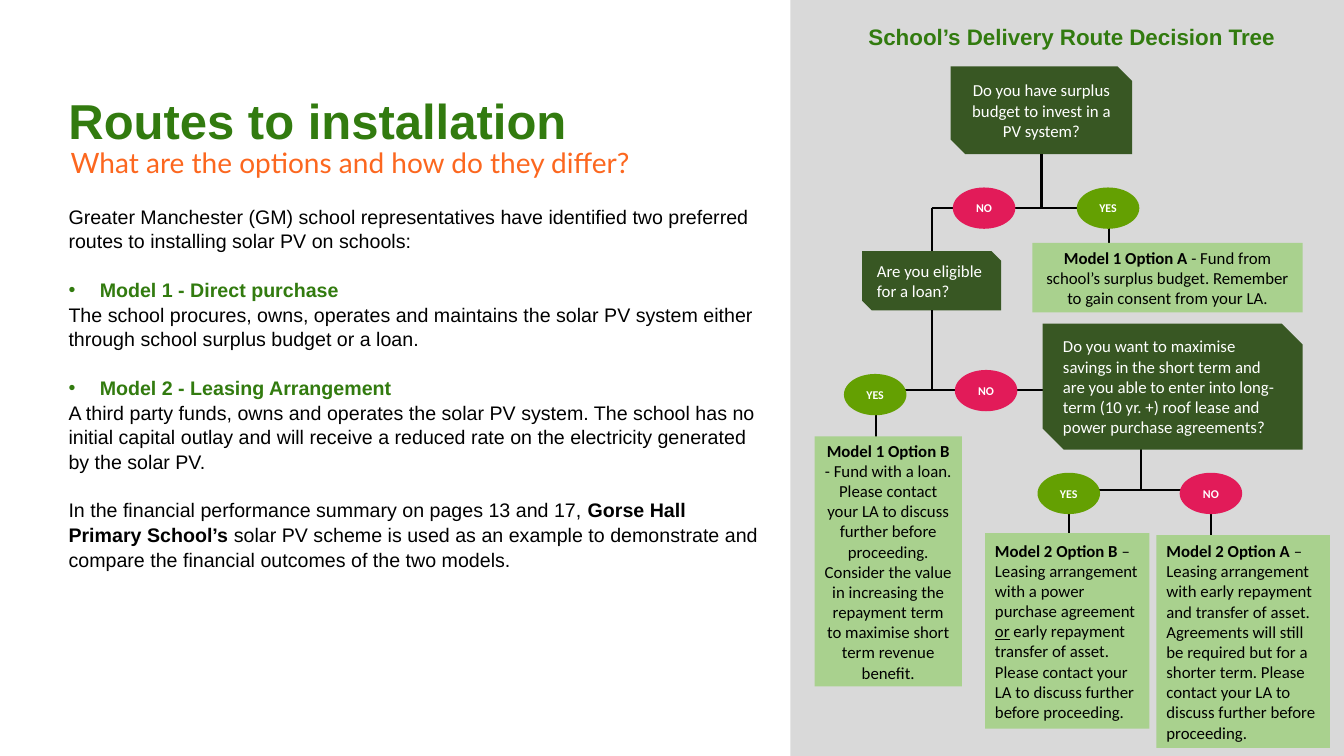
from lxml.etree import SubElement
from pptx import Presentation
from pptx.dml.color import RGBColor
from pptx.enum.shapes import MSO_CONNECTOR, MSO_SHAPE
from pptx.enum.text import MSO_ANCHOR, PP_ALIGN
from pptx.oxml.ns import qn
from pptx.util import Inches, Pt

COLOURS = {
    "panel": "D9D9D9", "heading": "327B0F", "subtitle": "FC671F",
    "question": "385723", "outcome": "A9D18E", "yes": "64A002",
    "no": "E21B59", "black": "000000", "white": "FFFFFF",
}


class DecisionPage:
    """Draws the elements of one slide in a shared style."""

    def __init__(self, page):
        self.page = page

    def colour(self, name):
        return RGBColor.from_string(COLOURS[name])

    def add_spans(self, para, spans, size, font, colour):
        for text, *marks in spans:
            span = para.add_run()
            span.text = text
            span.font.size = Pt(size)
            span.font.name = font
            span.font.color.rgb = self.colour(colour)
            span.font.bold = "bold" in marks
            span.font.underline = "underline" in marks

    def text_box(self, left, top, width, height, margin=0.1, anchor=MSO_ANCHOR.TOP):
        box = self.page.shapes.add_textbox(
            Inches(left), Inches(top), Inches(width), Inches(height))
        frame = box.text_frame
        frame.word_wrap = True
        frame.vertical_anchor = anchor
        frame.margin_left = frame.margin_right = Inches(margin)
        return frame

    def heading(self, bounds, text, size, align):
        para = self.text_box(*bounds, anchor=MSO_ANCHOR.MIDDLE).paragraphs[0]
        para.alignment = align
        para.line_spacing = 0.9
        self.add_spans(para, [(text, "bold")], size, "Arial", "heading")

    def subtitle(self, bounds, text):
        para = self.text_box(*bounds, margin=0).paragraphs[0]
        self.add_spans(para, [(text,)], 20, "Lato", "subtitle")

    def body(self, bounds, items):
        frame = self.text_box(*bounds, margin=0)
        for index, (kind, spans) in enumerate(items):
            para = frame.add_paragraph() if index else frame.paragraphs[0]
            para.line_spacing = 1.05
            if index and kind != "detail":
                para.space_before = Pt(17)
            if kind == "model":
                properties = para._p.get_or_add_pPr()
                properties.set("marL", str(Inches(0.31)))
                properties.set("indent", str(Inches(-0.31)))
                SubElement(properties, qn("a:buFont"), typeface="Arial")
                SubElement(properties, qn("a:buChar"), char="•")
            self.add_spans(para, spans, 14, "Arial", "heading" if kind == "model" else "black")

    def shape(self, kind, bounds, fill):
        box = self.page.shapes.add_shape(kind, *map(Inches, bounds))
        box.shadow.inherit = False
        box.fill.solid()
        box.fill.fore_color.rgb = self.colour(fill)
        box.line.fill.background()
        return box

    def label(self, box, spans, colour, size=12, align=PP_ALIGN.LEFT):
        box.text_frame.word_wrap = True
        box.text_frame.vertical_anchor = MSO_ANCHOR.MIDDLE
        para = box.text_frame.paragraphs[0]
        para.alignment = align
        self.add_spans(para, spans, size, "Calibri", colour)

    def question(self, bounds, text, align=PP_ALIGN.LEFT):
        box = self.shape(MSO_SHAPE.SNIP_2_DIAG_RECTANGLE, bounds, "question")
        self.label(box, [(text,)], "white", align=align)
        return box

    def outcome(self, bounds, spans, align=PP_ALIGN.LEFT):
        box = self.shape(MSO_SHAPE.RECTANGLE, bounds, "outcome")
        self.label(box, spans, "black", align=align)

    def answer(self, left, top, word):
        box = self.shape(MSO_SHAPE.OVAL, (left, top, 0.62, 0.41), word.lower())
        self.label(box, [(word, "bold")], "white", 8.5, PP_ALIGN.CENTER)

    def line(self, ends, above=None, below=None):
        link = self.page.shapes.add_connector(MSO_CONNECTOR.STRAIGHT, *map(Inches, ends))
        link.line.color.rgb = self.colour("black")
        link.line.width = Pt(1.5)
        SubElement(link._element.spPr, qn("a:effectLst"))
        if above is not None:
            link.begin_connect(above, 2)
        if below is not None:
            link.end_connect(below, 0)


def main():
    deck = Presentation()
    deck.slide_width, deck.slide_height = Inches(13.33), Inches(7.5)
    page = DecisionPage(deck.slides.add_slide(deck.slide_layouts[6]))

    page.shape(MSO_SHAPE.RECTANGLE, (7.84, 0, 5.49, 7.5), "panel")
    page.heading((0.58, 0.85, 7.34, 0.76), "Routes to installation", 35, PP_ALIGN.LEFT)
    page.subtitle((0.7, 1.39, 6.24, 0.44), "What are the options and how do they differ?")
    page.body((0.68, 1.97, 6.9, 5.08), [
        ("plain", [("Greater Manchester (GM) school representatives have identified "
                    "two preferred routes to installing solar PV on schools:",)]),
        ("model", [("Model 1 - Direct purchase", "bold")]),
        ("detail", [("The school procures, owns, operates and maintains the solar PV "
                     "system either through school surplus budget or a loan.",)]),
        ("model", [("Model 2 - Leasing Arrangement", "bold")]),
        ("detail", [("A third party funds, owns and operates the solar PV system. The "
                     "school has no initial capital outlay and will receive a reduced "
                     "rate on the electricity generated by the solar PV.",)]),
        ("plain", [("In the financial performance summary on pages 13 and 17, ",),
                   ("Gorse Hall Primary School’s ", "bold"),
                   ("solar PV scheme is used as an example to demonstrate and compare "
                    "the financial outcomes of the two models.",)]),
    ])

    page.heading((7.98, 0.19, 5.3, 0.37), "School’s Delivery Route Decision Tree",
                 16, PP_ALIGN.CENTER)
    for ends in [
        (9.24, 2.06, 11.17, 2.06), (11, 2.1, 11, 2.64),
        (8.68, 3.87, 10.75, 3.87), (8.69, 3.92, 8.69, 4.46),
        (11.32, 4.4, 11.32, 4.86), (10.36, 4.86, 12.29, 4.86),
        (10.6, 5.03, 10.6, 5.42), (12.01, 5.03, 12.01, 5.42),
    ]:
        page.line(ends)

    budget = page.question((9.43, 0.66, 1.8, 0.87),
                           "Do you have surplus budget to invest in a PV system?",
                           PP_ALIGN.CENTER)
    loan = page.question((8.55, 2.49, 1.38, 0.59), "Are you eligible for a loan?")
    page.question((10.34, 3.21, 2.58, 1.25),
                  "Do you want to maximise savings in the short term and are you able to "
                  "enter into long-term (10 yr. +) roof lease and power purchase agreements?")
    page.line((10.33, 1.53, 10.33, 2.06), above=budget)
    page.line((9.24, 2.06, 9.24, 2.49), below=loan)
    page.line((9.24, 3.08, 9.24, 3.87), above=loan)

    page.outcome((10.24, 2.41, 2.68, 0.69), [
        ("Model 1 Option A", "bold"),
        (" - Fund from school’s surplus budget. Remember to gain consent from your LA.",),
    ], PP_ALIGN.CENTER)
    page.outcome((8.08, 4.33, 1.46, 2.48), [
        ("Model 1 Option B", "bold"),
        (" - Fund with a loan. Please contact your LA to discuss further before "
         "proceeding. Consider the value in increasing the repayment term to maximise "
         "short term revenue benefit.",),
    ], PP_ALIGN.CENTER)
    page.outcome((9.77, 5.29, 1.63, 1.94), [
        ("Model 2 Option B", "bold"),
        (" – Leasing arrangement with a power purchase agreement ",),
        ("or", "underline"),
        (" early repayment transfer of asset. Please contact your LA to discuss further "
         "before proceeding.",),
    ])
    page.outcome((11.47, 5.31, 1.72, 2.11), [
        ("Model 2 Option A ", "bold"),
        ("– Leasing arrangement with early repayment and transfer of asset. Agreements "
         "will still be required but for a shorter term. Please contact your LA to "
         "discuss further before proceeding.",),
    ])

    for left, top, word in [
        (9.45, 1.86, "NO"), (10.68, 1.86, "YES"),
        (8.37, 3.71, "YES"), (9.47, 3.67, "NO"),
        (10.29, 4.69, "YES"), (11.7, 4.69, "NO"),
    ]:
        page.answer(left, top, word)

    deck.save("out.pptx")


if __name__ == "__main__":
    main()
